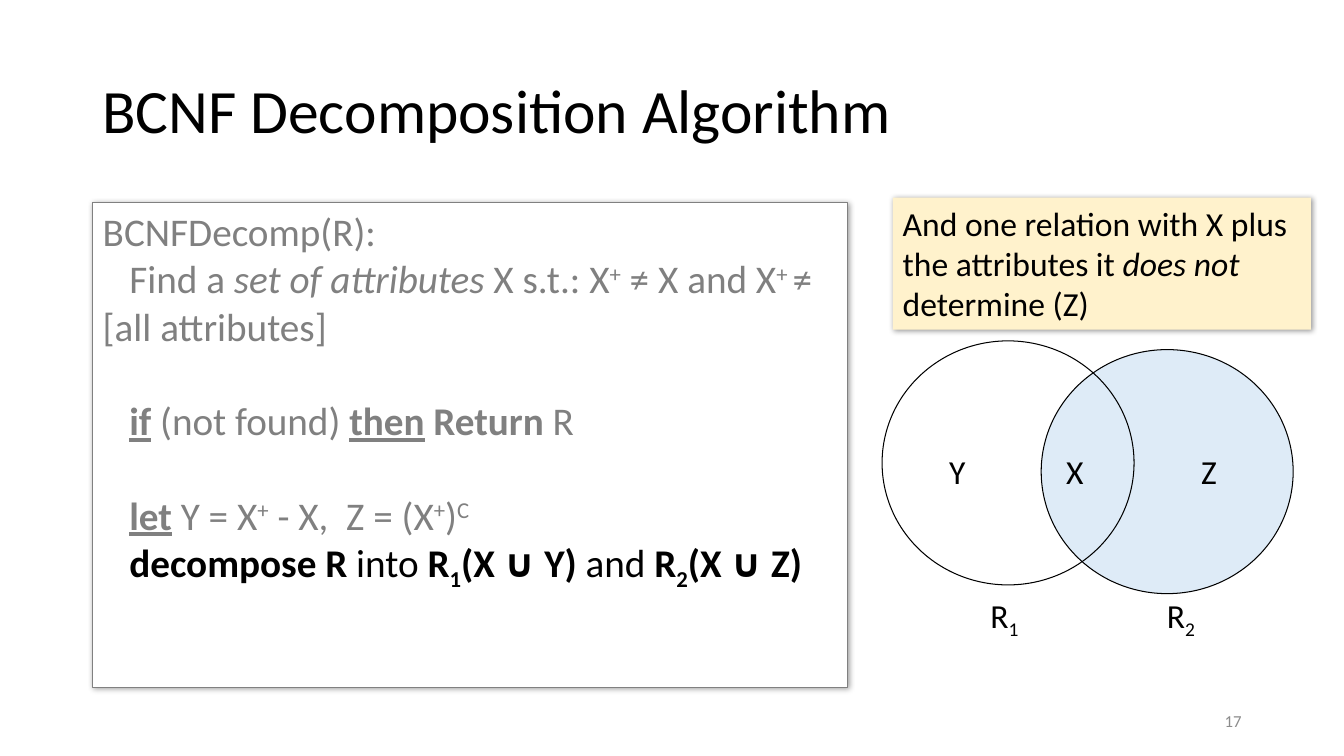
from lxml import etree
from pptx import Presentation
from pptx.dml.color import RGBColor
from pptx.enum.shapes import MSO_SHAPE
from pptx.enum.text import MSO_ANCHOR, PP_ALIGN
from pptx.oxml import parse_xml
from pptx.util import Cm, Pt

RECTANGLE, OVAL = MSO_SHAPE.RECTANGLE, MSO_SHAPE.OVAL
TOP, MIDDLE = MSO_ANCHOR.TOP, MSO_ANCHOR.MIDDLE
LEFT, RIGHT = PP_ALIGN.LEFT, PP_ALIGN.RIGHT

BLACK = RGBColor(0x00, 0x00, 0x00)
WHITE = RGBColor(0xFF, 0xFF, 0xFF)
GRAY = RGBColor(0x80, 0x80, 0x80)
PAGE_GRAY = RGBColor(0x8C, 0x8C, 0x8C)
CREAM = RGBColor(0xFF, 0xF2, 0xCC)
PALE_BLUE = RGBColor(0xDE, 0xEB, 0xF7)

SHADOW = (
    '<a:outerShdw xmlns:a="http://schemas.openxmlformats.org/drawingml/2006/main"'
    ' blurRad="50800" dist="12700" dir="2700000" algn="tl" rotWithShape="0">'
    '<a:srgbClr val="000000"><a:alpha val="40000"/></a:srgbClr></a:outerShdw>'
)


def write(shape, runs, size=24, color=BLACK, align=LEFT, anchor=TOP, wrap=True,
          spacing=1.0, before=0, indent=0):
    """Add a paragraph of (text, style) runs; style letters: b, i, u, ^ super, _ sub."""
    frame = shape.text_frame
    frame.word_wrap = wrap
    frame.vertical_anchor = anchor
    line = frame.paragraphs[0]
    if line.runs:
        line = frame.add_paragraph()
    line.alignment = align
    line.line_spacing = spacing
    line.space_before = Pt(before)
    line._p.get_or_add_pPr().set("indent", str(int(indent)))
    for text, style in runs:
        run = line.add_run()
        run.text = text
        font = run.font
        font.name, font.size, font.color.rgb = "Calibri", Pt(size), color
        font.bold, font.italic, font.underline = "b" in style, "i" in style, "u" in style
        if "^" in style:
            font._element.set("baseline", "30000")
        if "_" in style:
            font._element.set("baseline", "-25000")


def draw(kind, left, top, width, height, fill=None, outline=None, shadow=False):
    shape = slide.shapes.add_shape(kind, Cm(left), Cm(top), Cm(width), Cm(height))
    shape.shadow.inherit = False
    if fill is None:
        shape.fill.background()
    else:
        shape.fill.solid()
        shape.fill.fore_color.rgb = fill
    if outline is None:
        shape.line.fill.background()
    else:
        shape.line.color.rgb = outline
        shape.line.width = Pt(0.75)
    if shadow:
        effects = shape._element.spPr.find("{*}effectLst")
        etree.ElementBase.append(effects, parse_xml(SHADOW))
    return shape


deck = Presentation()
deck.slide_width, deck.slide_height = Cm(33.87), Cm(19.05)
slide = deck.slides.add_slide(deck.slide_layouts[6])

# Title and page number
title = slide.shapes.add_textbox(Cm(2.33), Cm(1.01), Cm(29.21), Cm(3.68))
write(title, [("BCNF Decomposition Algorithm", "")], size=44, anchor=MIDDLE, spacing=0.9)
page_number = slide.shapes.add_textbox(Cm(23.92), Cm(17.66), Cm(7.62), Cm(1.01))
write(page_number, [("17", "")], size=12, color=PAGE_GRAY, align=RIGHT, anchor=MIDDLE)

# Algorithm: runs, colour, indent in cm, space before in points
STEP, GAP = 0.67, 34
algorithm_lines = [
    ([("BCNFDecomp(R):", "")], GRAY, 0, 0),
    ([("Find a ", ""), ("set of attributes ", "i"), ("X s.t.: X", ""), ("+", "^"),
      (" ≠ X and X", ""), ("+ ", "^"), ("≠ [all attributes]", "")], GRAY, STEP, 0),
    ([("if", "bu"), (" (not found) ", ""), ("then", "bu"), (" ", ""),
      ("Return", "b"), (" R", "")], GRAY, STEP, GAP),
    ([("let", "bu"), (" Y = X", ""), ("+", "^"), (" - X,  Z = (X", ""), ("+", "^"),
      (")", ""), ("C", "^")], GRAY, STEP, GAP),
    ([("decompose R", "b"), (" into ", ""), ("R", "b"), ("1", "b_"), ("(X ∪ Y) ", "b"),
      ("and ", ""), ("R", "b"), ("2", "b_"), ("(X ∪ Z)", "b")], BLACK, STEP, 0),
]
algorithm = draw(RECTANGLE, 2.34, 5.11, 19.02, 12.22, WHITE, GRAY, shadow=True)
for runs, color, indent, before in algorithm_lines:
    write(algorithm, runs, size=28, color=color, indent=Cm(indent), before=before)

# Relation R2 lies behind the labels
draw(OVAL, 26.24, 8.81, 6.35, 6.15, PALE_BLUE, BLACK)

# Labels of the attribute sets and relations
labels = [
    (26.62, 11.25, 0.97, [("X", "")]),
    (30.02, 11.25, 0.91, [("Z", "")]),
    (23.67, 11.25, 0.97, [("Y", "")]),
    (24.71, 14.86, 1.27, [("R", ""), ("1", "_")]),
    (29.16, 14.86, 1.27, [("R", ""), ("2", "_")]),
]
for left, top, width, runs in labels:
    label = slide.shapes.add_textbox(Cm(left), Cm(top), Cm(width), Cm(1.27))
    write(label, runs, wrap=False)

# Explanation
note = draw(RECTANGLE, 22.5, 4.98, 10.54, 3.33, CREAM, shadow=True)
write(note, [("And one relation with X plus the attributes it ", ""),
             ("does not ", "i"), ("determine (Z)", "")])

# Relation R1 overlaps R2
draw(OVAL, 22.23, 8.59, 6.35, 6.15, outline=BLACK)

deck.save("out.pptx")
